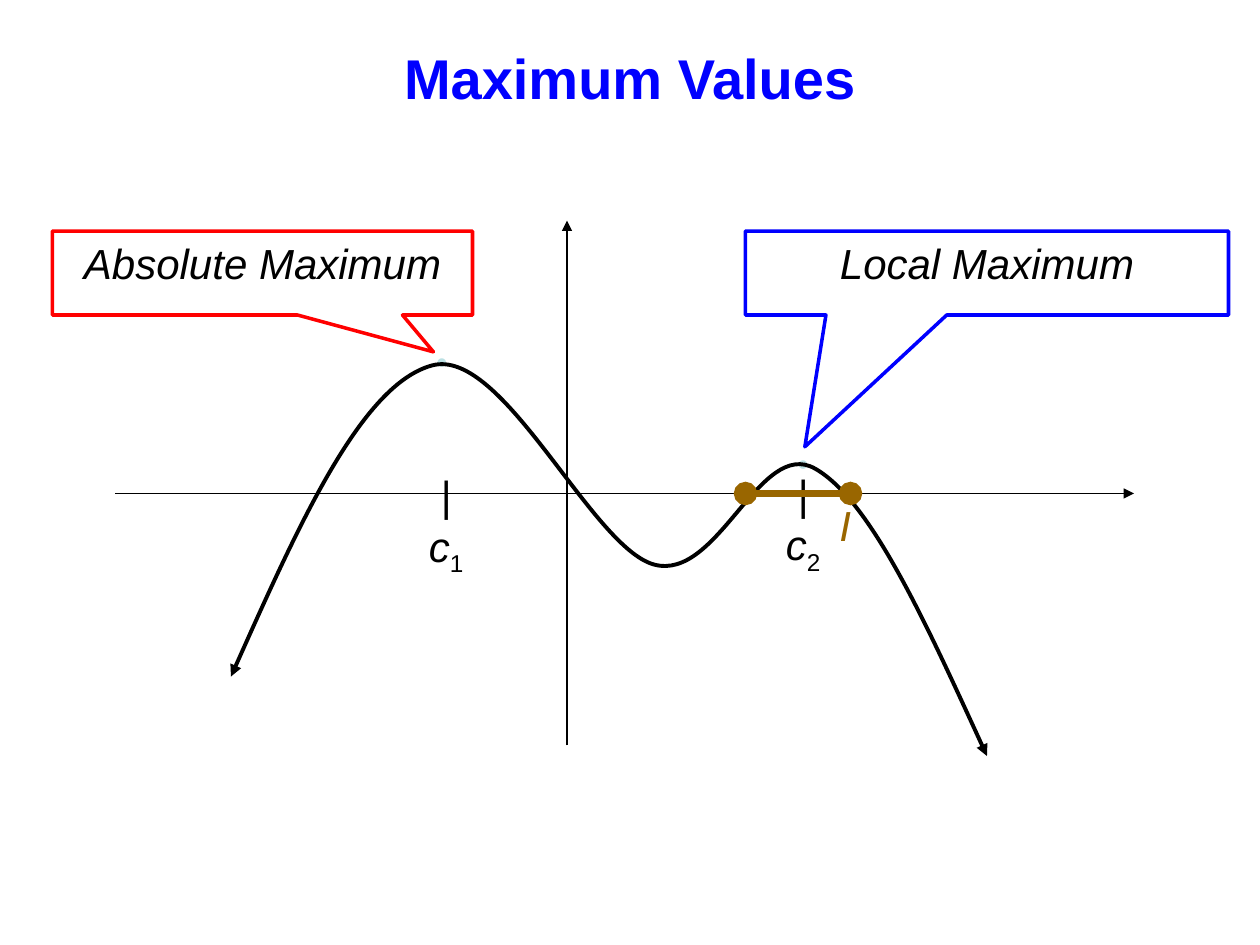
from dataclasses import dataclass
from typing import Any, Optional

from pptx import Presentation
from pptx.dml.color import RGBColor
from pptx.enum import shapes, text
from pptx.oxml import ns, xmlchemy as xml
from pptx.util import Pt

BLACK, BLUE, RED = "000000", "0000FF", "FF0000"
BROWN, PALE = "996600", "BBE0E3"


@dataclass
class Run:
    words: str
    size: float = 24
    color: str = BLACK
    bold: bool = False
    slant: bool = False
    sub: bool = False


@dataclass
class Label:
    """Each inner list is one line of a single paragraph."""
    box: tuple
    lines: list
    gap: int = 50
    anchor: Any = text.MSO_ANCHOR.TOP


@dataclass
class Callout:
    box: tuple
    tip: tuple
    words: str
    color: str


@dataclass
class Line:
    start: tuple
    end: tuple
    color: str
    width: float
    head: Optional[str] = None
    tail: Optional[str] = None


def rgb(code: str) -> RGBColor:
    return RGBColor.from_string(code)


def add(parent: Any, tag: str, **attrs: str) -> Any:
    """Append a new XML child and return it."""
    child = xml.OxmlElement(tag)
    for name, value in attrs.items():
        child.set(name, value)
    parent.append(child)
    return child


def stroke(shape: Any, color: str, width: float,
           head: Optional[str] = None, tail: Optional[str] = None) -> None:
    shape.line.color.rgb = rgb(color)
    shape.line.width = Pt(width)
    pen = shape.line._get_or_add_ln()
    for tag, kind in (("a:headEnd", head), ("a:tailEnd", tail)):
        if kind:
            add(pen, tag, type=kind)


def write(par: Any, item: Run) -> None:
    run = par.add_run()
    run.text = item.words
    font = run.font
    font.name, font.size = "Arial", Pt(item.size)
    font.bold, font.italic = item.bold, item.slant
    font.color.rgb = rgb(item.color)
    if item.sub:
        font._element.set("baseline", "-25000")


def draw_label(slide: Any, label: Label) -> None:
    frame = slide.shapes.add_textbox(*map(Pt, label.box)).text_frame
    frame.word_wrap = True
    frame.vertical_anchor = label.anchor
    par = frame.paragraphs[0]
    par.alignment = text.PP_ALIGN.CENTER
    if label.gap:
        space = add(par._p.get_or_add_pPr(), "a:spcBef")
        add(space, "a:spcPct", val=str(label.gap * 1000))
    for row, line in enumerate(label.lines):
        if row:
            par.add_line_break()
        for item in line:
            write(par, item)


def draw_callout(slide: Any, call: Callout) -> None:
    kind = shapes.MSO_SHAPE.RECTANGULAR_CALLOUT
    shape = slide.shapes.add_shape(kind, *map(Pt, call.box))
    shape.shadow.inherit = False
    for i, value in enumerate(call.tip):
        shape.adjustments[i] = value
    shape.fill.solid()
    shape.fill.fore_color.rgb = rgb("FFFFFF")
    stroke(shape, call.color, 2)
    frame = shape.text_frame
    frame.vertical_anchor = text.MSO_ANCHOR.TOP
    par = frame.paragraphs[0]
    par.alignment = text.PP_ALIGN.CENTER
    write(par, Run(call.words, slant=True))


def draw_line(slide: Any, line: Line) -> None:
    kind = shapes.MSO_CONNECTOR.STRAIGHT
    shape = slide.shapes.add_connector(kind, *map(Pt, line.start + line.end))
    stroke(shape, line.color, line.width, line.head, line.tail)
    add(shape._element.spPr, "a:effectLst")


def draw_curve(slide: Any, points: list) -> None:
    """Draw Bezier pieces: a start, then three points for each piece."""
    spots = [(Pt(x), Pt(y)) for x, y in points]
    pen = slide.shapes.build_freeform(*spots[0])
    pen.add_line_segments(spots[1:], close=False)
    shape = pen.convert_to_shape()
    track = next(shape._element.iter(ns.qn("a:path")))
    legs = track.findall(ns.qn("a:lnTo"))
    for i in range(0, len(legs), 3):
        bend = add(track, "a:cubicBezTo")
        for leg in legs[i:i + 3]:
            bend.append(leg[0])
            track.remove(leg)
    shape.shadow.inherit = False
    shape.fill.background()
    stroke(shape, BLACK, 2.25, "triangle", "triangle")


def dot(left: float, top: float) -> Label:
    return Label((left, top, 30, 50), [[Run("•", 18, PALE)]])


def tick(left: float, top: float, index: str) -> Label:
    """Mark a point on the axis, with its name below."""
    return Label((left, top, 42, 65),
                 [[Run("|")], [Run("c", slant=True), Run(index, sub=True)]])


TITLE = Label((36, 21.6, 648, 44.6),
              [[Run("Maximum Values", 32, BLUE, bold=True)]],
              0, text.MSO_ANCHOR.MIDDLE)
AXES = [Line((324, 426), (324, 126), BLACK, 0.75, tail="triangle"),
        Line((66, 282), (648, 282), BLACK, 0.75, tail="triangle")]
LOCAL = Callout((426, 132, 276, 48), (-0.377, 2.07), "Local Maximum", BLUE)
TOP = Callout((30, 132, 240, 48), (0.407, 0.939), "Absolute Maximum", RED)
CURVE = [(132, 386.6),
         (169.2, 303.1), (206.6, 219.6), (247, 208.8),
         (287.3, 198), (337.7, 312.5), (373.7, 322.6),
         (410.4, 332.6), (434.2, 249.8), (465.8, 267.8),
         (497.5, 285.8), (530.6, 359.3), (564, 432)]
SPAN = Line((426, 282), (486, 282), BROWN, 4.5, "oval", "oval")
NAME = Label((468, 282, 30, 36), [[Run("I", color=BROWN, slant=True)]])


def main() -> None:
    deck = Presentation()
    deck.slide_width, deck.slide_height = Pt(720), Pt(540)
    slide = deck.slides.add_slide(deck.slide_layouts[6])
    draw_label(slide, TITLE)
    for axis in AXES:
        draw_line(slide, axis)
    draw_callout(slide, LOCAL)
    draw_label(slide, dot(237.6, 192))
    draw_callout(slide, TOP)
    for label in (dot(444, 250), tick(438, 264, "2"), tick(234, 265, "1")):
        draw_label(slide, label)
    draw_curve(slide, CURVE)
    draw_line(slide, SPAN)
    draw_label(slide, NAME)
    deck.save("out.pptx")


if __name__ == "__main__":
    main()
